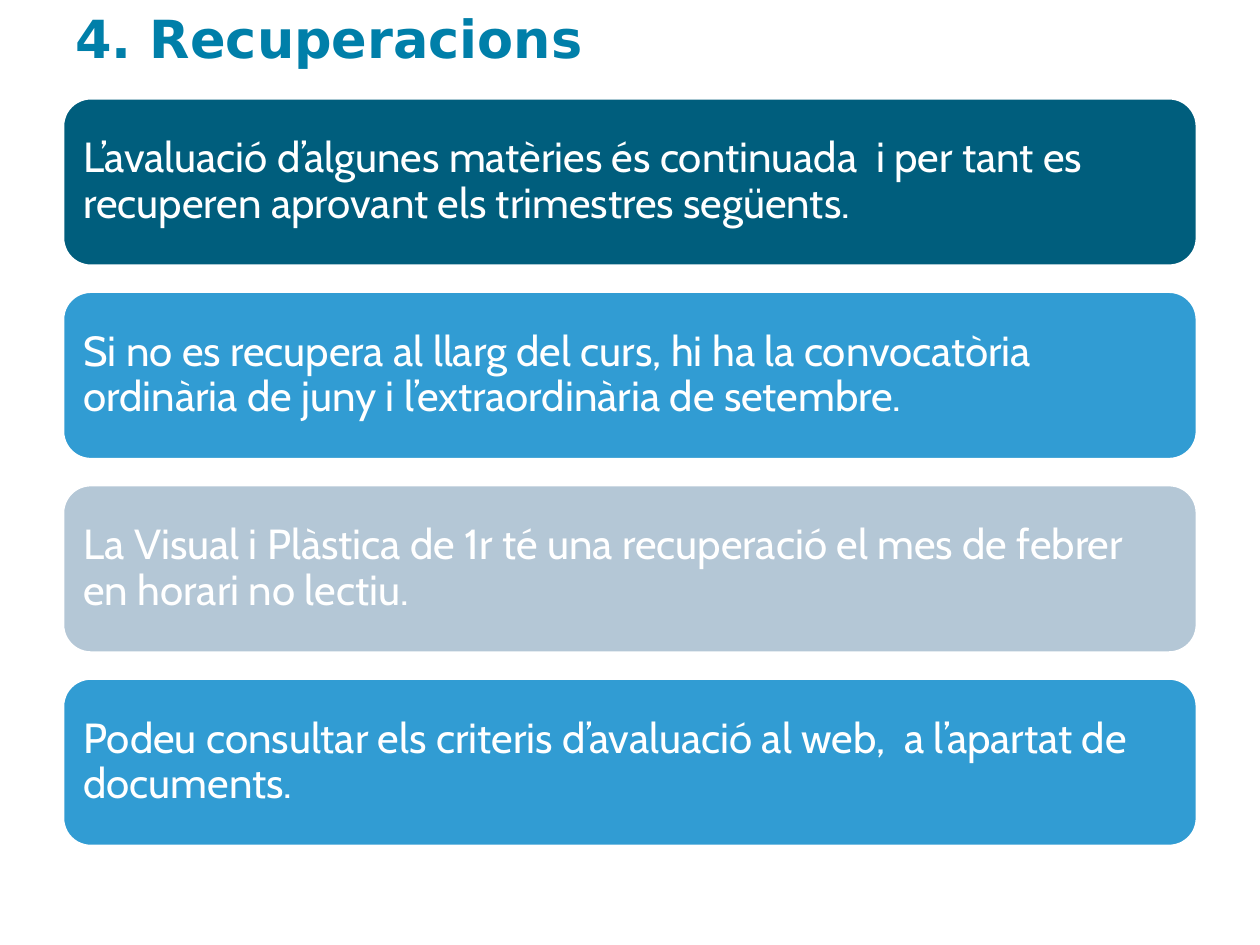
"""Build the slide on make-up assessments: a title and four stacked cards."""
from pptx import Presentation
from pptx.dml.color import RGBColor
from pptx.enum.shapes import MSO_SHAPE
from pptx.enum.text import MSO_ANCHOR, PP_ALIGN
from pptx.util import Inches, Pt

ROUNDED = MSO_SHAPE.ROUNDED_RECTANGLE
MIDDLE, BOTTOM = MSO_ANCHOR.MIDDLE, MSO_ANCHOR.BOTTOM
LEFT = PP_ALIGN.LEFT
WHITE = RGBColor(0xFF, 0xFF, 0xFF)
TEAL = RGBColor(0x00, 0x7F, 0xA9)
NAVY = RGBColor(0x00, 0x5E, 0x7D)
BLUE = RGBColor(0x31, 0x9C, 0xD3)
GREY = RGBColor(0xB4, 0xC7, 0xD6)

TITLE_FONT = {"name": "DejaVu Sans", "size": Pt(30), "bold": True}
CARD_FONT = {"name": "Cabin", "size": Pt(24)}
CARD_FRAME = {"word_wrap": True, "vertical_anchor": MIDDLE,
              "margin_left": Inches(0.1), "margin_right": Inches(0.1),
              "margin_top": Inches(0.1), "margin_bottom": Inches(0.1)}
TITLE_FRAME = {"word_wrap": True, "vertical_anchor": BOTTOM}
CARDS = [
    (NAVY, "L’avaluació d’algunes matèries és continuada  i per tant es "
           "recuperen aprovant els trimestres següents."),
    (BLUE, "Si no es recupera al llarg del curs, hi ha la convocatòria "
           "ordinària de juny i l’extraordinària de setembre."),
    (GREY, "La Visual i Plàstica de 1r té una recuperació el mes de febrer "
           "en horari no lectiu."),
    (BLUE, "Podeu consultar els criteris d’avaluació al web,  a l’apartat de "
           "documents."),
]
CARD_TOP, CARD_HEIGHT, CARD_PITCH = 0.78, 1.33, 1.535


def write(sp, text, frame, font, color):
    tf = sp.text_frame
    for key, value in frame.items():
        setattr(tf, key, value)
    p = tf.paragraphs[0]
    p.alignment = LEFT
    r = p.add_run()
    r.text = text
    for key, value in font.items():
        setattr(r.font, key, value)
    r.font.color.rgb = color
    return p


prs = Presentation()
prs.slide_width, prs.slide_height = Inches(10), Inches(7.5)
s = prs.slides.add_slide(prs.slide_layouts[6])

for i, (fill, text) in enumerate(CARDS):
    sp = s.shapes.add_shape(ROUNDED, Inches(0.5), Inches(CARD_TOP + i * CARD_PITCH),
                            Inches(9), Inches(CARD_HEIGHT))
    sp.shadow.inherit = False
    sp.fill.solid()
    sp.fill.fore_color.rgb = fill
    sp.line.color.rgb = WHITE
    sp.line.width = Pt(1.5)
    p = write(sp, text, CARD_FRAME, CARD_FONT, WHITE)
    p.line_spacing = 0.9

title = s.shapes.add_textbox(Inches(0.5), Inches(0.09), Inches(9), Inches(0.51))
write(title, "4. Recuperacions", TITLE_FRAME, TITLE_FONT, TEAL)

prs.save("out.pptx")
